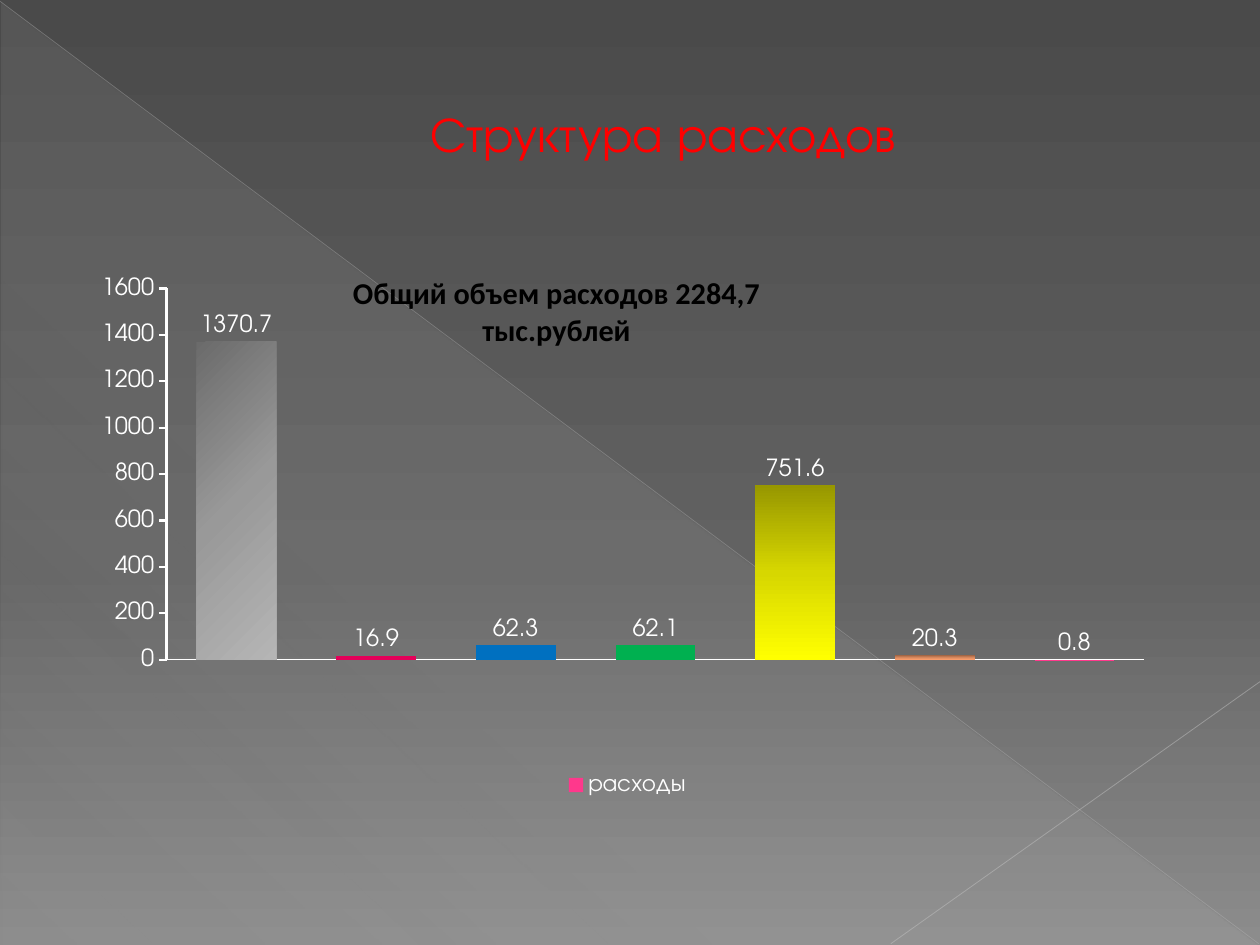
import pptx
import pptx.chart.data
import pptx.dml.color
import pptx.enum.chart
import pptx.enum.shapes
import pptx.enum.text
import pptx.oxml
import pptx.oxml.ns
import pptx.util
from pptx.util import Inches

FONT = "TeX Gyre Adventor"
WHITE = "FFFFFF"
qn = pptx.oxml.ns.qn


def rgb(value):
    return pptx.dml.color.RGBColor.from_string(value)


def xml(text, prefix="a"):
    head, rest = text.split(">", 1) if not text.split(">", 1)[0].endswith("/") else (text[:-2], None)
    declared = f"{head} {pptx.oxml.ns.nsdecls(prefix)}"
    return pptx.oxml.parse_xml(declared + ("/>" if rest is None else ">" + rest))


def format_font(font, size=13.5, color=WHITE, name=FONT, bold=False):
    font.size, font.name, font.bold = pptx.util.Pt(size), name, bold
    font.color.rgb = rgb(color)


def gradient(fill, stops, angle):
    """Stops are (position %, colour, opacity %); the angle runs clockwise."""
    gs = "".join(
        f'<a:gs pos="{pos * 1000}"><a:srgbClr val="{color}">'
        f'<a:alpha val="{alpha * 1000}"/></a:srgbClr></a:gs>'
        for pos, color, alpha in stops)
    fill.solid()
    parent = fill._xPr
    parent.replace(parent.find(qn("a:solidFill")), xml(
        f'<a:gradFill rotWithShape="1"><a:gsLst>{gs}</a:gsLst>'
        f'<a:lin ang="{angle * 60000}" scaled="0"/></a:gradFill>'))


def opaque(*stops):
    return [(pos, color, 100) for pos, color in stops]


def place(element, index, x, y, w=None, h=None, inner=False):
    """Set the manual layout of a chart part, as fractions of the chart."""
    for old in element.findall(qn("c:layout")):
        element.remove(old)
    parts = '<c:layoutTarget val="inner"/>' if inner else ""
    parts += '<c:xMode val="edge"/><c:yMode val="edge"/>'
    parts += "".join(f'<c:{tag} val="{value}"/>'
                     for tag, value in zip("xywh", (x, y, w, h)) if value is not None)
    element.insert(index, xml(
        f"<c:layout><c:manualLayout>{parts}</c:manualLayout></c:layout>", "c"))


class Deck:
    def __init__(self, width, height):
        self.prs = pptx.Presentation()
        self.prs.slide_width, self.prs.slide_height = Inches(width), Inches(height)
        self.s = self.prs.slides.add_slide(self.prs.slide_layouts[6])

    def background(self, stops, angle):
        gradient(self.s.background.fill, stops, angle)

    def triangle(self, box, stops, angle):
        sp = self.s.shapes.add_shape(
            pptx.enum.shapes.MSO_SHAPE.RIGHT_TRIANGLE, *map(Inches, box))
        sp.shadow.inherit = False
        sp.line.fill.background()
        gradient(sp.fill, stops, angle)

    def line(self, start, end, color, width, alpha):
        cn = self.s.shapes.add_connector(
            pptx.enum.shapes.MSO_CONNECTOR.STRAIGHT, *map(Inches, start + end))
        cn.line.width = pptx.util.Pt(width)
        cn.line.color.rgb = rgb(color)
        clr = cn._element.spPr.find(".//" + qn("a:srgbClr"))
        clr.append(xml(f'<a:alpha val="{alpha * 1000}"/>'))
        cn._element.spPr.append(xml("<a:effectLst/>"))

    def title(self, box, text, indent, outline, **font):
        tf = self.s.shapes.add_textbox(*map(Inches, box)).text_frame
        tf.word_wrap = True
        tf.vertical_anchor = pptx.enum.text.MSO_ANCHOR.MIDDLE
        p = tf.paragraphs[0]
        p.alignment = pptx.enum.text.PP_ALIGN.CENTER
        p._p.get_or_add_pPr().set("marL", str(Inches(indent)))
        r = p.add_run()
        r.text = text
        format_font(r.font, **font)
        r.font._element.insert(0, xml(
            f'<a:ln w="{pptx.util.Pt(0.5)}"><a:solidFill><a:srgbClr val="{outline}"/>'
            "</a:solidFill></a:ln>"))

    def column_chart(self, box, name, values, color, point_fills, heading):
        enums = pptx.enum.chart
        data = pptx.chart.data.CategoryChartData()
        data.categories = [str(i + 1) for i in range(len(values))]
        data.add_series(name, values)
        chart = self.s.shapes.add_chart(
            enums.XL_CHART_TYPE.COLUMN_CLUSTERED, *map(Inches, box), data).chart
        format_font(chart.font, size=17.3)

        # Columns and their labels
        plot = chart.plots[0]
        plot.gap_width, plot.vary_by_categories = 75, False
        series = plot.series[0]
        series.format.fill.solid()
        series.format.fill.fore_color.rgb = rgb(color)
        for i, paint in point_fills.items():
            fill = series.points[i].format.fill
            if isinstance(paint, str):
                fill.solid()
                fill.fore_color.rgb = rgb(paint)
            else:
                gradient(fill, *paint)
        plot.has_data_labels = True
        labels = plot.data_labels
        labels.show_value = True
        labels.position = enums.XL_LABEL_POSITION.OUTSIDE_END
        format_font(labels.font)

        # Axes
        for axis, width in ((chart.category_axis, 0.75), (chart.value_axis, 1.25)):
            axis.has_major_gridlines = False
            axis.format.line.color.rgb = rgb(WHITE)
            axis.format.line.width = pptx.util.Pt(width)
            format_font(axis.tick_labels.font)
        chart.category_axis.major_tick_mark = enums.XL_TICK_MARK.NONE
        chart.category_axis.tick_label_position = enums.XL_TICK_LABEL_POSITION.NONE
        chart.value_axis.major_tick_mark = enums.XL_TICK_MARK.OUTSIDE
        chart.value_axis.minimum_scale, chart.value_axis.maximum_scale = 0, 1600
        chart.value_axis.major_unit = 200

        # Heading and legend
        tf = chart.chart_title.text_frame
        tf.text = heading
        for p in tf.paragraphs:
            for r in p.runs:
                format_font(r.font, 17.3, "000000", "Calibri", True)
        chart.has_legend = True
        chart.legend.position = enums.XL_LEGEND_POSITION.BOTTOM
        chart.legend.include_in_layout = False
        format_font(chart.legend.font)

        place(chart._chartSpace.chart.plotArea, 0, 0.105, 0.107, 0.83, 0.535, inner=True)
        place(chart.chart_title._element, 1, 0.26, 0.08)
        place(chart.legend._element, 1, 0.44, 0.8)


def main():
    deck = Deck(10, 7.5)

    # Backdrop
    deck.background(opaque((0, "4A4A4A"), (60, "626262"), (100, "8C8C8C")), 90)
    deck.triangle((0.01, 0.02, 9.98, 7.48),
                  [(0, "D2D2D2", 10), (70, "D2D2D2", 8), (100, "D2D2D2", 1)], 133)
    deck.line((0, 0.01), (9.99, 7.49), "BFBFBF", 0.39, 35)
    deck.line((10, 5.41), (7.07, 7.49), "C6C6C6", 0.47, 45)

    # Title
    deck.title((0.5, 0.29, 9, 1.53), "Структура расходов", indent=0.53,
               outline="B12761", size=28, color="FF0000")

    # Expenses chart
    gray = opaque((0, "6B6B6B"), (50, "999999"), (100, "B5B5B5"))
    yellow = opaque((0, "979700"), (50, "D7D700"), (100, "FFFF00"))
    orange = opaque((0, "965E40"), (50, "D5865C"), (100, "FC9F6D"))
    deck.column_chart(
        (0.34, 1.7, 9.35, 5.51), "расходы",
        (1370.7, 16.9, 62.3, 62.1, 751.6, 20.3, 0.8), "FF388C",
        {0: (gray, 45), 1: "E40059", 2: "0070C0", 3: "00B050",
         4: (yellow, 90), 5: (orange, 90)},
        "Общий объем расходов 2284,7\nтыс.рублей")

    deck.prs.save("out.pptx")


if __name__ == "__main__":
    main()
